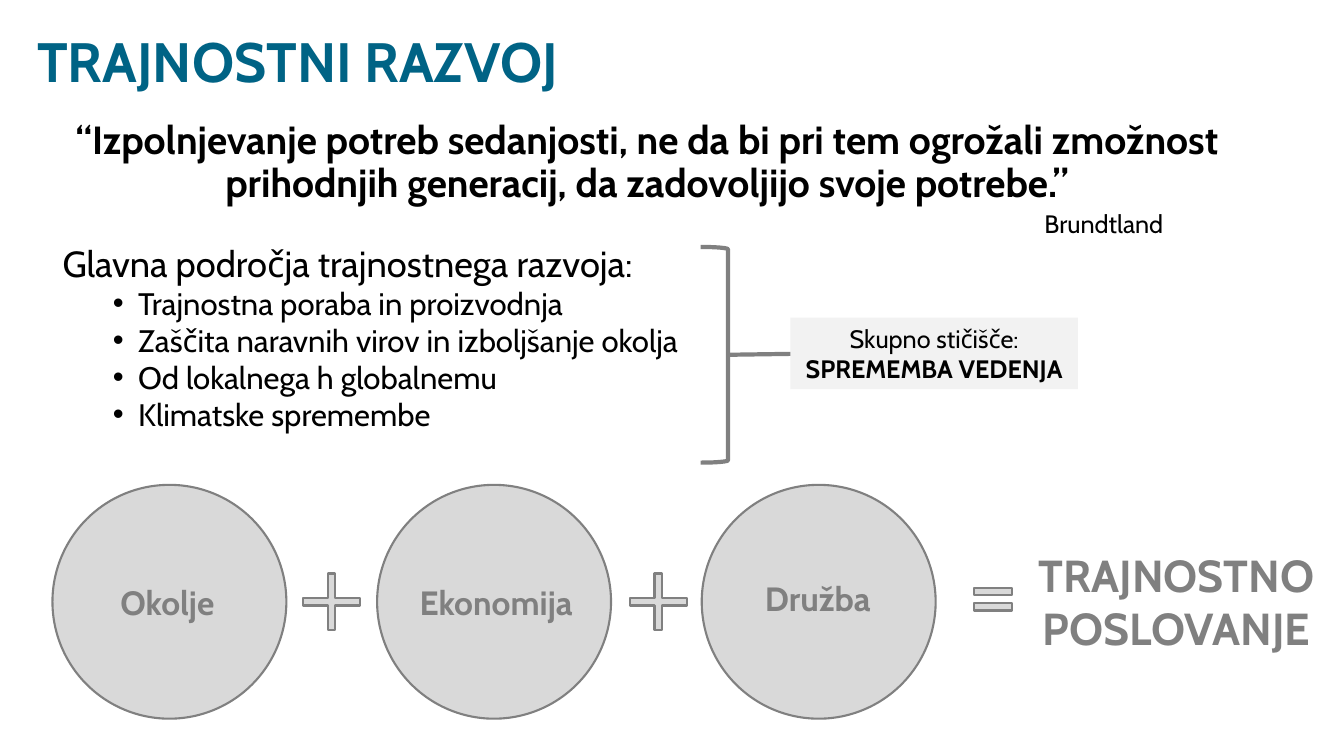
from pptx import Presentation
from pptx.dml.color import RGBColor as Rgb
from pptx.enum.shapes import MSO_CONNECTOR as Line, MSO_SHAPE as Shape
from pptx.enum.text import MSO_ANCHOR as Anchor, MSO_AUTO_SIZE as Fit, PP_ALIGN as Align
from pptx.oxml.ns import qn
from pptx.util import Pt
from dataclasses import dataclass
from lxml.etree import SubElement as Sub

SCALE = 9144  # one px is a hundredth of an inch


def emu(*px):
    return [n * SCALE for n in px]


@dataclass(frozen=True)
class Theme:
    font: str = "Cabin"
    teal: str = "006385"
    ink: str = "000000"
    gray: str = "808080"
    pale: str = "D9D9D9"
    mist: str = "F2F2F2"
    head: float = 39.6
    total: float = 32
    quote: float = 28
    lead: float = 25.9
    label: float = 24
    item: float = 22.2
    small: float = 18
    thin: float = 1.5
    thick: float = 3


class Deck:
    def __init__(self, theme):
        self.theme = theme
        self.prs = Presentation()
        self.prs.slide_width, self.prs.slide_height = emu(1333, 750)
        self.slide = self.prs.slides.add_slide(self.prs.slide_layouts[3])

    def style(self, para, size, color, bold=False, align=Align.LEFT):
        para.alignment = align
        font = para.font
        font.name, font.size, font.bold = self.theme.font, Pt(size), bold
        font.color.rgb = Rgb.from_string(color)

    def holder(self, idx, box, anchor=Anchor.TOP):
        """Move a template placeholder and return its text frame."""
        shape = self.slide.placeholders[idx]
        shape.left, shape.top, shape.width, shape.height = emu(*box)
        frame = shape.text_frame
        frame.auto_size, frame.word_wrap = Fit.NONE, True
        frame.vertical_anchor = anchor
        return frame

    def para(self, frame, text, size, color, spacing, bold=False,
             align=Align.LEFT, bullet=False):
        """Fill the first paragraph of a placeholder, or add one."""
        first = not frame.text
        para = frame.paragraphs[0] if first else frame.add_paragraph()
        para.text = text
        para.line_spacing = spacing
        para.space_before = Pt(0 if first else 5)
        para.space_after = Pt(0)
        props = para._p.get_or_add_pPr()
        left, hang = emu(75, -25) if bullet else (0, 0)
        props.set("marL", str(left))
        props.set("indent", str(hang))
        if bullet:
            para.level = 1
            Sub(props, qn("a:buFont"), typeface="Arial")
            Sub(props, qn("a:buChar"), char="•")
        else:
            Sub(props, qn("a:buNone"))
        self.style(para, size, color, bold, align)

    def text(self, text, box, size, color, bold=False, align=Align.CENTER):
        frame = self.slide.shapes.add_textbox(*emu(*box)).text_frame
        frame.word_wrap = True
        frame.text = text
        self.style(frame.paragraphs[0], size, color, bold, align)

    def shape(self, kind, box, fill=None, line=None, width=0, adjust=()):
        shape = self.slide.shapes.add_shape(kind, *emu(*box))
        shape.shadow.inherit = False
        for i, value in enumerate(adjust):
            shape.adjustments[i] = value
        if fill:
            shape.fill.solid()
            shape.fill.fore_color.rgb = Rgb.from_string(fill)
        else:
            shape.fill.background()
        if line:
            shape.line.color.rgb = Rgb.from_string(line)
            shape.line.width = Pt(width)
        else:
            shape.line.fill.background()
        return shape

    def line(self, ends, color, width):
        line = self.slide.shapes.add_connector(Line.STRAIGHT, *emu(*ends))
        line.line.color.rgb = Rgb.from_string(color)
        line.line.width = Pt(width)
        Sub(line._element.spPr, qn("a:effectLst"))


def main():
    theme = Theme()
    deck = Deck(theme)

    # Title, quote and its author
    title = deck.holder(0, (27, 26, 1229, 76), Anchor.MIDDLE)
    deck.para(title, "TRAJNOSTNI RAZVOJ", theme.head, theme.teal, 0.9, True)
    quote = deck.holder(1, (27, 115, 1229, 95))
    deck.para(quote, "“Izpolnjevanje potreb sedanjosti, ne da bi pri tem ogrožali "
              "zmožnost prihodnjih generacij, da zadovoljijo svoje potrebe.”",
              theme.quote, theme.ink, 0.9, True, Align.CENTER)
    deck.text("Brundtland", (1026, 202, 185, 40), theme.small, theme.ink,
              align=Align.LEFT)

    # Main areas
    areas = deck.holder(2, (52, 243, 1229, 192))
    deck.para(areas, "Glavna področja trajnostnega razvoja:",
              theme.lead, theme.ink, 0.8)
    for item in ("Trajnostna poraba in proizvodnja",
                 "Zaščita naravnih virov in izboljšanje okolja",
                 "Od lokalnega h globalnemu",
                 "Klimatske spremembe"):
        deck.para(areas, item, theme.item, theme.ink, 0.8, bullet=True)

    # Sum of three circles
    trim = dict(fill=theme.pale, line=theme.gray, width=theme.thin)
    for i in range(3):
        deck.shape(Shape.OVAL, (52 + 322 * i, 481, 232, 232), **trim)
    for left in (301, 625):
        deck.shape(Shape.CROSS, (left, 569, 56, 56), adjust=(0.433,), **trim)
    deck.shape(Shape.MATH_EQUAL, (959, 563, 52, 63),
               adjust=(0.119, 0.118), **trim)
    for name, left, top in (("Okolje", 50, 572), ("Ekonomija", 376, 572),
                            ("Družba", 695, 568)):
        deck.text(name, (left, top, 232, 50), theme.label, theme.gray, True)
    deck.text("TRAJNOSTNO POSLOVANJE", (986, 538, 362, 118),
              theme.total, theme.gray, True)

    # Bracket leading to the common point
    deck.shape(Shape.RIGHT_BRACKET, (695, 245, 27, 214),
               line=theme.gray, width=theme.thick)
    deck.line((722, 352, 927, 349), theme.gray, theme.thick)
    point = deck.shape(Shape.RECTANGLE, (784, 315, 285, 71), theme.mist)
    point.text_frame.text = "Skupno stičišče:\nSPREMEMBA VEDENJA"
    for para, bold in zip(point.text_frame.paragraphs, (False, True)):
        deck.style(para, theme.small, theme.ink, bold, Align.CENTER)

    deck.prs.save("out.pptx")


if __name__ == "__main__":
    main()
